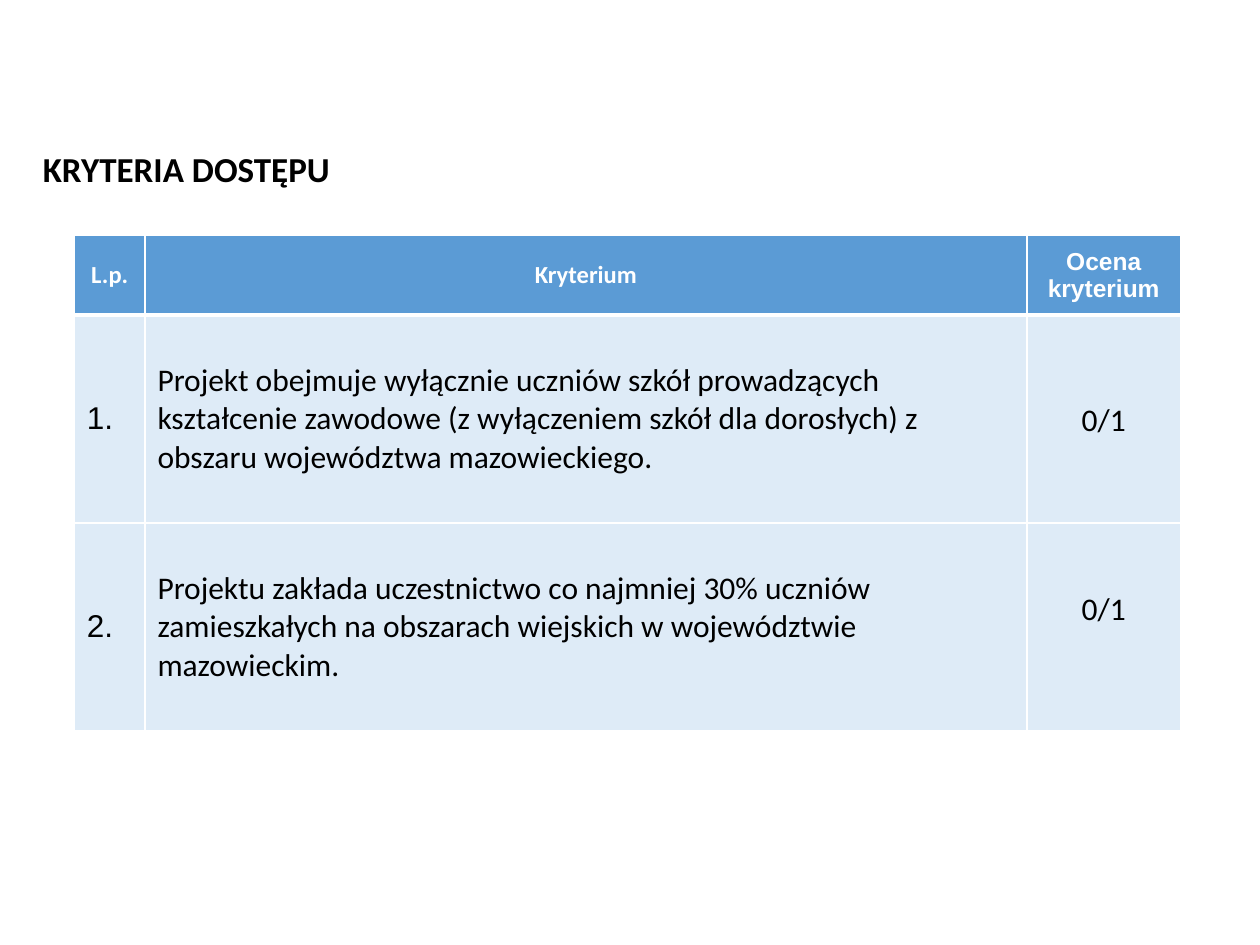
from dataclasses import dataclass

from lxml.etree import SubElement
from pptx import Presentation
from pptx.dml.color import RGBColor
from pptx.enum.text import MSO_ANCHOR, MSO_AUTO_SIZE, PP_ALIGN
from pptx.oxml.ns import qn
from pptx.util import Inches, Pt


@dataclass(frozen=True)
class Theme:
    header_fill: str = "5B9BD5"
    body_fill: str = "DEEBF7"
    white: str = "FFFFFF"
    black: str = "000000"
    title_size: int = 20
    header_size: int = 14
    body_size: int = 18
    main_font: str = "Calibri"
    number_font: str = "Arial"


theme = Theme()


def write_text(frame, text, *, size, font, color, bold=False,
               align=PP_ALIGN.LEFT, spacing=1.0):
    para = frame.paragraphs[0]
    para.alignment = align
    para.line_spacing = spacing
    span = para.add_run()
    span.text = text
    span.font.size = Pt(size)
    span.font.name = font
    span.font.bold = bold
    span.font.color.rgb = RGBColor.from_string(color)


def draw_borders(cell, **widths):
    properties = cell._tc.get_or_add_tcPr()
    for side in "LRTB":
        line = SubElement(properties, qn(f"a:ln{side}"), w=str(Pt(widths.get(side, 1))))
        fill = SubElement(line, qn("a:solidFill"))
        SubElement(fill, qn("a:srgbClr"), val=theme.white)


deck = Presentation()
deck.slide_width, deck.slide_height = Inches(10), Inches(7.5)
page = deck.slides.add_slide(deck.slide_layouts[5])

# Title
title = page.shapes.title
title.left, title.top = Inches(0.24), Inches(1.12)
title.width, title.height = Inches(3.7), Inches(0.44)
title.text_frame.word_wrap = True
title.text_frame.auto_size = MSO_AUTO_SIZE.SHAPE_TO_FIT_TEXT
title.text_frame.vertical_anchor = MSO_ANCHOR.MIDDLE
write_text(title.text_frame, "KRYTERIA DOSTĘPU", size=theme.title_size,
           font=theme.main_font, color=theme.black, bold=True)

# Criteria table
rows = [
    ("L.p.", "Kryterium", "Ocena kryterium"),
    ("1.", "Projekt obejmuje wyłącznie uczniów szkół prowadzących kształcenie "
           "zawodowe (z wyłączeniem szkół dla dorosłych) z obszaru województwa "
           "mazowieckiego.", "0/1"),
    ("2.", "Projektu zakłada uczestnictwo co najmniej 30% uczniów zamieszkałych "
           "na obszarach wiejskich w województwie mazowieckim.", "0/1"),
]
column_widths = (0.56, 7, 1.22)
row_heights = (0.63, 1.65, 1.65)
header_fonts = (theme.main_font, theme.main_font, theme.number_font)
body_fonts = (theme.number_font, theme.main_font, theme.main_font)

table = page.shapes.add_table(
    len(rows), len(column_widths), Inches(0.59), Inches(1.87),
    Inches(sum(column_widths)), Inches(sum(row_heights))).table
for column, width in zip(table.columns, column_widths):
    column.width = Inches(width)
for row, height in zip(table.rows, row_heights):
    row.height = Inches(height)

for row_index, texts in enumerate(rows):
    is_header = row_index == 0
    for column_index, text in enumerate(texts):
        cell = table.cell(row_index, column_index)
        is_score = column_index == 2 and not is_header
        draw_borders(cell, B=3 if is_header else 1, T=3 if row_index == 1 else 1)
        cell.fill.solid()
        cell.fill.fore_color.rgb = RGBColor.from_string(
            theme.header_fill if is_header else theme.body_fill)
        cell.vertical_anchor = MSO_ANCHOR.MIDDLE
        if is_score:
            cell.margin_left = cell.margin_right = Inches(0.04)
            cell.margin_top = cell.margin_bottom = Inches(0.04)
        write_text(
            cell.text_frame, text,
            size=theme.header_size if is_header else theme.body_size,
            font=(header_fonts if is_header else body_fonts)[column_index],
            color=theme.white if is_header else theme.black,
            bold=is_header,
            align=PP_ALIGN.CENTER if is_header or is_score else PP_ALIGN.LEFT,
            spacing=1.07 if is_score else 1.0)

# The last score sits a little above the middle of its row
table.cell(2, 2).margin_bottom = Inches(0.34)

deck.save("out.pptx")
